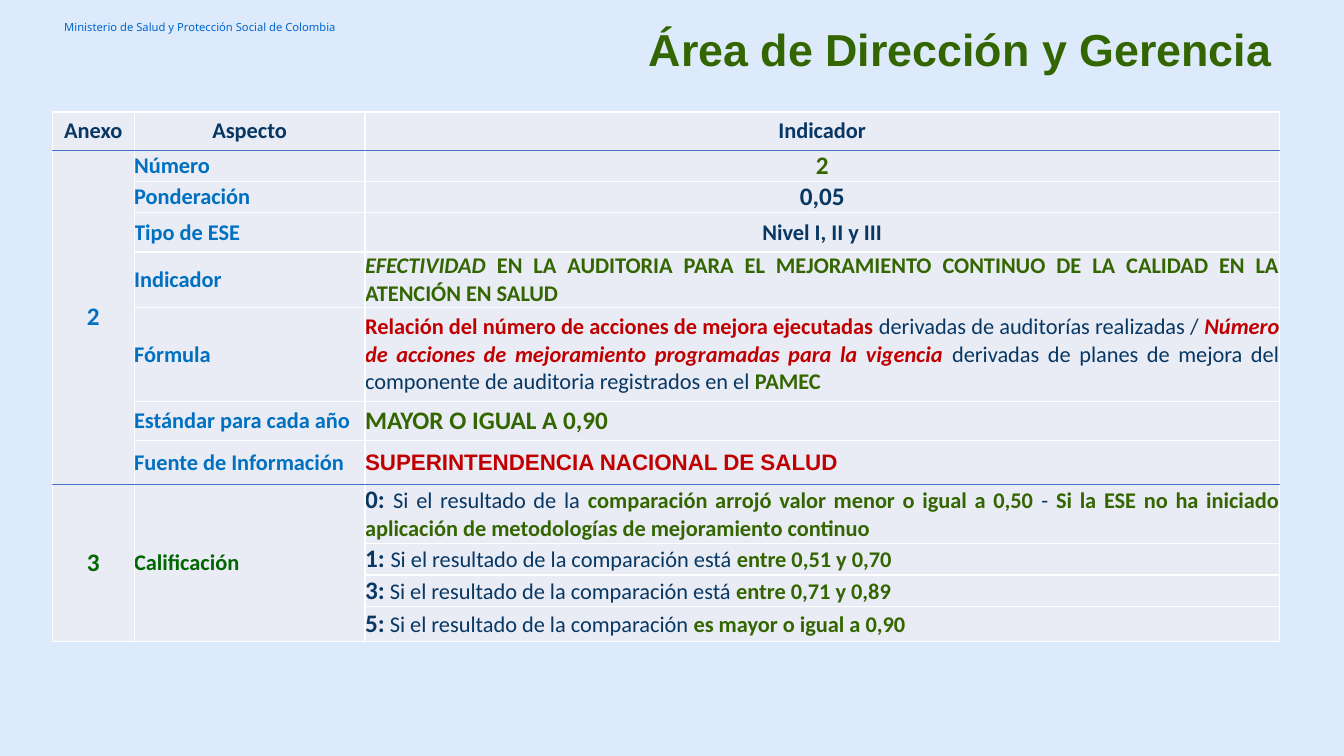
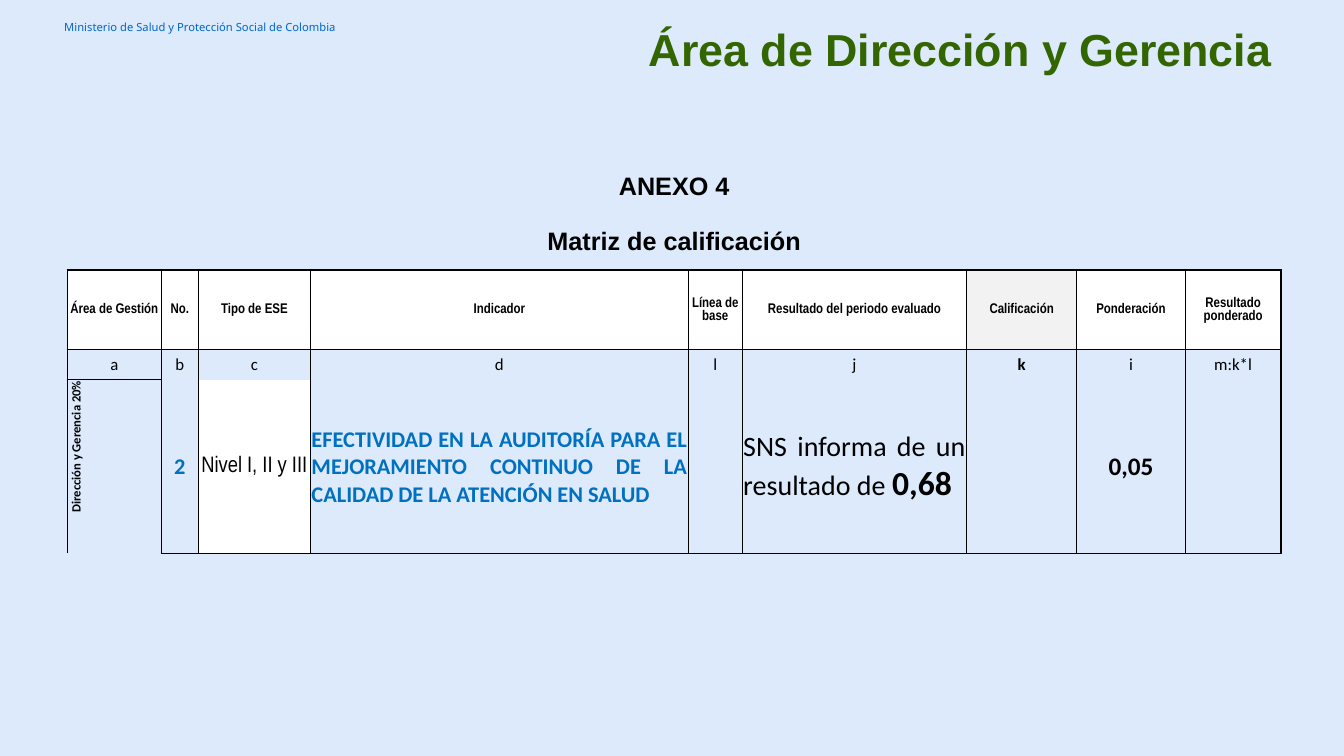
from collections import namedtuple

from lxml import etree
from pptx import Presentation
from pptx import util as u
from pptx.dml.color import RGBColor
from pptx.enum import text
from pptx.oxml import ns

SKY = RGBColor(0xDC, 0xEA, 0xFB)
LAVENDER = RGBColor(0xE9, 0xEB, 0xF5)
WHITE = RGBColor(0xFF, 0xFF, 0xFF)
GREY = RGBColor(0xF2, 0xF2, 0xF2)
BLACK = RGBColor(0x00, 0x00, 0x00)
NAVY = RGBColor(0x07, 0x37, 0x63)
BLUE = RGBColor(0x00, 0x70, 0xC0)
RULE_BLUE = RGBColor(0x44, 0x72, 0xC4)
HEADER_BLUE = RGBColor(0x00, 0x66, 0xCD)
GREEN = RGBColor(0x33, 0x66, 0x00)
DEEP_GREEN = RGBColor(0x00, 0x66, 0x00)
RED = RGBColor(0xC0, 0x00, 0x00)

LEFT = text.PP_ALIGN.LEFT
CENTER = text.PP_ALIGN.CENTER
RIGHT = text.PP_ALIGN.RIGHT
JUSTIFY = text.PP_ALIGN.JUSTIFY

Run = namedtuple("Run", "text size color bold italic font",
                 defaults=(16, NAVY, True, False, "Calibri"))


def write(p, runs, align):
    p.alignment = align
    for run in runs:
        r = p.add_run()
        r.text = run.text
        f = r.font
        f.size, f.bold, f.italic, f.name = u.Pt(run.size), run.bold, run.italic, run.font
        f.color.rgb = run.color


def add_text(s, box, run, align):
    tf = s.shapes.add_textbox(*map(u.Cm, box)).text_frame
    tf.word_wrap = True
    tf.vertical_anchor = text.MSO_ANCHOR.MIDDLE
    write(tf.paragraphs[0], [run], align)
    return tf.paragraphs[0]


def set_borders(cell, borders):
    tcPr = cell._tc.get_or_add_tcPr()
    for side in "LRTB":
        color, width = borders.get(side, (None, 0))
        ln = etree.SubElement(tcPr, ns.qn("a:ln" + side), w=str(int(u.Pt(width))))
        if color is None:
            etree.SubElement(ln, ns.qn("a:noFill"))
        else:
            fill = etree.SubElement(ln, ns.qn("a:solidFill"))
            etree.SubElement(fill, ns.qn("a:srgbClr"), val=str(color))


def style_cell(cell, borders, fill, inset):
    set_borders(cell, borders)
    if fill is None:
        cell.fill.background()
    else:
        cell.fill.solid()
        cell.fill.fore_color.rgb = fill
    cell.margin_left = cell.margin_right = cell.margin_top = u.Cm(inset)
    cell.margin_bottom = 0
    cell.vertical_anchor = text.MSO_ANCHOR.MIDDLE


def add_grid(s, left, top, cols, rows):
    table = s.shapes.add_table(len(rows), len(cols), u.Cm(left), u.Cm(top),
                               u.Cm(sum(cols)), u.Cm(sum(rows))).table
    table.first_row = table.horz_banding = False
    for col, width in zip(table.columns, cols):
        col.width = u.Cm(width)
    for row, height in zip(table.rows, rows):
        row.height = u.Cm(height)
    return table


def add_page(prs):
    s = prs.slides.add_slide(prs.slide_layouts[6])
    add_text(s, (1.37, 0.36, 7.92, 0.66),
             Run("Ministerio de Salud y Protección Social de Colombia", 8, HEADER_BLUE,
                 False, font="Noto Sans"), LEFT)
    title = add_text(s, (14.12, 0.43, 18.19, 1.78),
                     Run("Área de Dirección y Gerencia", 32, GREEN, font="Arial"), RIGHT)
    title.line_spacing = 0.9
    return s


def score(mark, lead, result):
    return [Run(mark, 18), Run(lead, bold=False), Run(result, color=GREEN)]


def indicator_table(s, left, top):
    table = add_grid(s, left, top, [2.06, 5.82, 23.04],
                     [0.97, 0.78, 0.79, 0.99, 1.4, 2.37, 0.99, 1.09, 1.5, 0.79, 0.79, 0.89])
    for first, last, col in ((1, 7, 0), (8, 11, 0), (8, 11, 1)):
        table.cell(first, col).merge(table.cell(last, col))

    section_ends = (0, 7)
    for i in range(len(table.rows)):
        for j in range(len(table.columns)):
            cell = table.cell(i, j)
            borders = dict.fromkeys("LRTB", (WHITE, 1))
            if i - 1 in section_ends:
                borders["T"] = (RULE_BLUE, 1)
            if i + cell.span_height - 1 in section_ends:
                borders["B"] = (RULE_BLUE, 1)
            style_cell(cell, borders, LAVENDER, 0)

    for j, heading in enumerate(("Anexo", "Aspecto", "Indicador")):
        write(table.cell(0, j).text_frame.paragraphs[0], [Run(heading)], CENTER)
    for i, number, color in ((1, "2", BLUE), (8, "3", DEEP_GREEN)):
        write(table.cell(i, 0).text_frame.paragraphs[0], [Run(number, 18, color)], CENTER)

    aspects = ["Número", "Ponderación", "Tipo de ESE", "Indicador", "Fórmula",
               "Estándar para cada año", "Fuente de Información", "Calificación"]
    for i, aspect in enumerate(aspects, 1):
        color = DEEP_GREEN if aspect == "Calificación" else BLUE
        write(table.cell(i, 1).text_frame.paragraphs[0], [Run(aspect, color=color)], LEFT)

    details = [
        (CENTER, [Run("2", 18, GREEN)]),
        (CENTER, [Run("0,05", 18)]),
        (CENTER, [Run("Nivel I, II y III")]),
        (JUSTIFY, [Run("EFECTIVIDAD ", color=GREEN, italic=True),
                   Run("EN LA AUDITORIA PARA EL MEJORAMIENTO CONTINUO DE LA CALIDAD "
                       "EN LA ATENCIÓN EN SALUD", color=GREEN)]),
        (JUSTIFY, [Run("Relación del número de acciones de mejora ejecutadas", color=RED),
                   Run(" derivadas de auditorías realizadas / ", bold=False),
                   Run("Número de acciones de mejoramiento programadas para la vigencia ",
                       color=RED, italic=True),
                   Run("derivadas de planes de mejora del componente de auditoria "
                       "registrados en el ", bold=False),
                   Run("PAMEC", color=GREEN)]),
        (LEFT, [Run("MAYOR O IGUAL A 0,90", 18, GREEN)]),
        (LEFT, [Run("SUPERINTENDENCIA NACIONAL DE SALUD", color=RED, font="Arial")]),
        (JUSTIFY, score("0: ", "Si el resultado de la ",
                        "comparación arrojó valor menor o igual a 0,50")
         + [Run(" - ", bold=False),
            Run("Si la ESE no ha iniciado aplicación de metodologías de "
                "mejoramiento continuo", color=GREEN)]),
        (LEFT, score("1: ", "Si el resultado de la comparación está ", "entre 0,51 y 0,70")),
        (LEFT, score("3:", " Si el resultado de la comparación está ", "entre 0,71 y 0,89")),
        (LEFT, score("5:", " Si el resultado de la comparación ", "es mayor o igual a 0,90")),
    ]
    for i, (align, runs) in enumerate(details, 1):
        write(table.cell(i, 2).text_frame.paragraphs[0], runs, align)


def matrix_borders(i, j, last):
    thin, thick = (BLACK, 0.5), (BLACK, 1.5)
    if i == 0:
        return {}
    if i == 1:
        return {"B": thick}
    borders = {"L": thick if j == 0 else thin, "R": thick if j == last else thin}
    if i == 2:
        borders.update(T=thick, B=thin)
    elif i == 3:
        borders["T"] = thin
        if j == 0:
            borders["B"] = (BLACK, 1)
    elif j == 0:
        borders.update(T=(BLACK, 1), R=thin)
    else:
        borders["B"] = thin
    return borders


def matrix_table(s, left, top):
    table = add_grid(s, left, top, [2.36, 0.94, 2.82, 9.53, 1.35, 5.66, 2.77, 2.74, 2.41],
                     [1.32, 1.44, 2.01, 0.76, 4.37])
    last = len(table.columns) - 1
    for i in (0, 1):
        table.cell(i, 0).merge(table.cell(i, last))

    headings = ["Área de Gestión", "No.", "Tipo de ESE", "Indicador", "Línea de base",
                "Resultado del periodo evaluado", "Calificación", "Ponderación",
                "Resultado ponderado"]
    letters = ["a", "b", "c", "d", "l", "j", "k", "i", "m:k*l"]
    values = {
        0: (RIGHT, [Run("Dirección y Gerencia 20%", 9, BLACK)]),
        1: (CENTER, [Run("2", color=BLUE)]),
        2: (CENTER, [Run("Nivel I, II y III", 16, BLACK, False, font="Arial Narrow")]),
        3: (JUSTIFY, [Run("EFECTIVIDAD EN LA AUDITORÍA PARA EL MEJORAMIENTO CONTINUO "
                          "DE LA CALIDAD DE LA ATENCIÓN EN SALUD", color=BLUE)]),
        5: (JUSTIFY, [Run("SNS informa de un resultado de ", 20, BLACK, False),
                      Run("0,68", 24, BLACK)]),
        7: (CENTER, [Run("0,05", 18, BLACK)]),
    }
    contents = {(i, 0): (CENTER, [Run(caption, 18, BLACK, font="Arial")])
                for i, caption in enumerate(("ANEXO 4", "Matriz de calificación"))}
    for j, (heading, letter) in enumerate(zip(headings, letters)):
        contents[2, j] = CENTER, [Run(heading, 10, BLACK, font="Arial Narrow")]
        contents[3, j] = CENTER, [Run(letter, 12, BLACK, letter == "k")]
    contents.update({(4, j): value for j, value in values.items()})

    fills = {(2, j): WHITE for j in range(last + 1)}
    fills.update({(2, 6): GREY, (4, 2): WHITE})
    for i in range(len(table.rows)):
        for j in range(last + 1):
            cell = table.cell(i, j)
            style_cell(cell, matrix_borders(i, j, last), fills.get((i, j)), 0.03)
            if (i, j) in contents:
                align, runs = contents[i, j]
                write(cell.text_frame.paragraphs[0], runs, align)
    table.cell(4, 0)._tc.get_or_add_tcPr().set("vert", "vert270")


def main():
    prs = Presentation()
    prs.slide_width, prs.slide_height = u.Cm(33.87), u.Cm(19.05)
    background = prs.slide_master.background.fill
    background.solid()
    background.fore_color.rgb = SKY
    indicator_table(add_page(prs), 1.32, 2.82)
    matrix_table(add_page(prs), 1.7, 4.04)
    prs.save("out.pptx")


if __name__ == "__main__":
    main()
